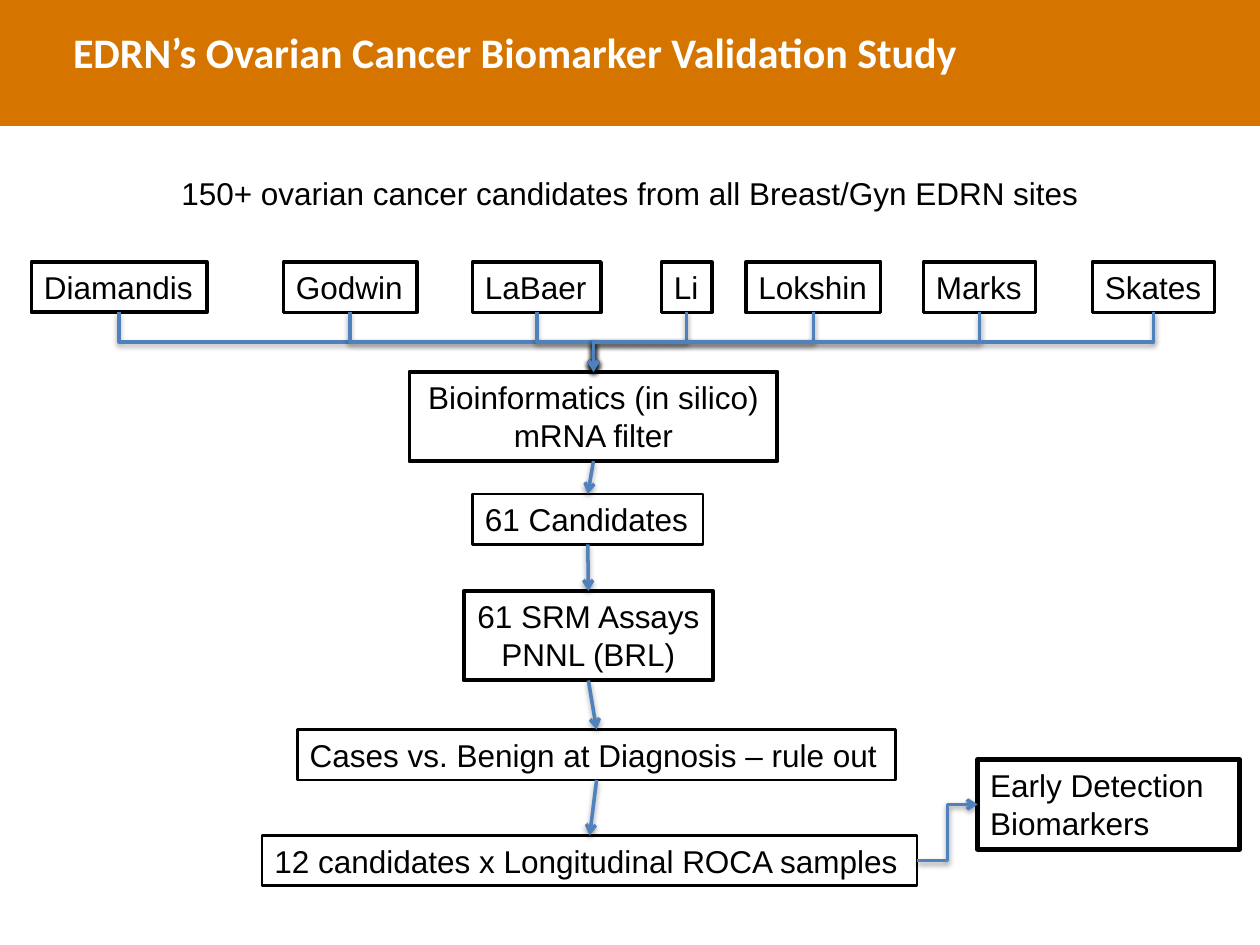
from lxml import etree
from pptx import Presentation
from pptx import util as u
from pptx.dml.color import RGBColor
from pptx.enum import shapes, text
from pptx.oxml import parse_xml
from pptx.oxml.ns import nsdecls, qn

HUES = {"band": "D57500", "ink": "000000", "wire": "4F81BD", "title": "FFFFFF"}
SHADE = (
    f'<a:effectLst {nsdecls("a")}><a:outerShdw blurRad="40000" dist="20000" '
    'dir="5400000" rotWithShape="0"><a:srgbClr val="000000">'
    '<a:alpha val="38000"/></a:srgbClr></a:outerShdw></a:effectLst>'
)


class Flow:
    """Draws the parts of a flow chart on one slide in a shared style."""

    def __init__(self, slide):
        self.slide = slide
        self.font = "Arial"
        self.size = 18

    def hue(self, name):
        return RGBColor.from_string(HUES[name])

    def band(self, wide, high):
        bar = self.slide.shapes.add_shape(
            shapes.MSO_SHAPE.RECTANGLE, 0, 0, u.Inches(wide), u.Inches(high))
        bar.shadow.inherit = False
        bar.fill.solid()
        bar.fill.fore_color.rgb = self.hue("band")
        bar.line.fill.background()

    def label(self, words, spot, mid=False, wrap=True):
        box = self.slide.shapes.add_textbox(*map(u.Inches, spot))
        frame = box.text_frame
        frame.text = words
        frame.word_wrap = wrap
        frame.auto_size = text.MSO_AUTO_SIZE.SHAPE_TO_FIT_TEXT
        for line in frame.paragraphs:
            line.alignment = text.PP_ALIGN.CENTER if mid else text.PP_ALIGN.LEFT
            for run in line.runs:
                run.font.name = self.font
                run.font.size = u.Pt(self.size)
                run.font.color.rgb = self.hue("ink")
        return box

    def title(self, words, spot):
        box = self.label(words, spot)
        frame = box.text_frame
        frame.auto_size = text.MSO_AUTO_SIZE.NONE
        frame.margin_left = frame.margin_right = 0
        frame.margin_top = frame.margin_bottom = 0
        line = frame.paragraphs[0]
        line.line_spacing = 0.85
        font = line.runs[0].font
        font.name, font.size, font.bold = "Calibri", u.Pt(24), True
        font.color.rgb = self.hue("title")

    def box(self, words, spot, edge, mid=False, wrap=False):
        box = self.label(words, spot, mid, wrap)
        box.line.color.rgb = self.hue("ink")
        box.line.width = u.Pt(edge)
        return box

    def wire(self, kind, start, end):
        link = self.slide.shapes.add_connector(kind, *map(int, start + end))
        link.line.color.rgb = self.hue("wire")
        link.line.width = u.Pt(2)
        tip = etree.SubElement(link.line._get_or_add_ln(), qn("a:tailEnd"))
        tip.set("type", "arrow")
        link._element.spPr.append(parse_xml(SHADE))
        return link

    def drop(self, top, low):
        self.wire(shapes.MSO_CONNECTOR.STRAIGHT, self.foot(top), self.head(low))

    def join(self, top, low):
        (ax, ay), (bx, by) = self.foot(top), self.head(low)
        mx, my = (ax + bx) / 2, (ay + by) / 2
        right = bx > ax
        dx = (by - ay) / 2 * (1 if right else -1)
        dy = abs(bx - ax) / 2
        link = self.wire(shapes.MSO_CONNECTOR.ELBOW,
                         (mx + dx, my - dy), (mx - dx, my + dy))
        turn = 270 if right else 90
        link._element.spPr.find(qn("a:xfrm")).set("rot", str(turn * 60000))

    def step(self, left, right):
        self.wire(shapes.MSO_CONNECTOR.ELBOW,
                  (left.left + left.width, left.top + left.height / 2),
                  (right.left, right.top + right.height / 2))

    def head(self, box):
        return box.left + box.width / 2, box.top

    def foot(self, box):
        return box.left + box.width / 2, box.top + box.height


def main():
    deck = Presentation()
    deck.slide_width, deck.slide_height = u.Inches(10), u.Inches(7.5)
    flow = Flow(deck.slides.add_slide(deck.slide_layouts[6]))

    flow.band(10, 1)
    flow.title("EDRN’s Ovarian Cancer Biomarker Validation Study",
               (0.58, 0.27, 8.97, 0.5))
    flow.label("150+ ovarian cancer candidates from all Breast/Gyn EDRN sites",
               (0, 1.33, 10, 0.4), mid=True)

    sites = [
        ("Diamandis", 0.25, 1.39, 2.25), ("Godwin", 2.25, 1.06, 2),
        ("LaBaer", 3.75, 1.02, 2), ("Li", 5.25, 0.4, 2),
        ("Lokshin", 5.92, 1.07, 2), ("Marks", 7.33, 0.89, 2),
        ("Skates", 8.67, 0.97, 2),
    ]
    labs = [flow.box(name, (left, 2.08, wide, 0.4), edge)
            for name, left, wide, edge in sites]

    steps = [
        ("Bioinformatics (in silico) mRNA filter",
         (3.25, 2.95, 2.92, 0.71), 2.25, True, True),
        ("61 Candidates", (3.75, 3.92, 1.83, 0.4), 1.5),
        ("61 SRM Assays\nPNNL (BRL)", (3.68, 4.69, 1.98, 0.71), 2.25, True),
        ("Cases vs. Benign at Diagnosis – rule out",
         (2.36, 5.79, 4.75, 0.4), 1.5),
        ("12 candidates x Longitudinal ROCA samples",
         (2.08, 6.63, 5.2, 0.4), 1.5),
    ]
    chain = [flow.box(*item) for item in steps]
    goal = flow.box("Early Detection Biomarkers", (7.76, 6.03, 2.08, 0.71), 3,
                    wrap=True)

    for lab in labs:
        flow.join(lab, chain[0])
    for top, low in zip(chain, chain[1:]):
        flow.drop(top, low)
    flow.step(chain[-1], goal)

    deck.save("out.pptx")


if __name__ == "__main__":
    main()
